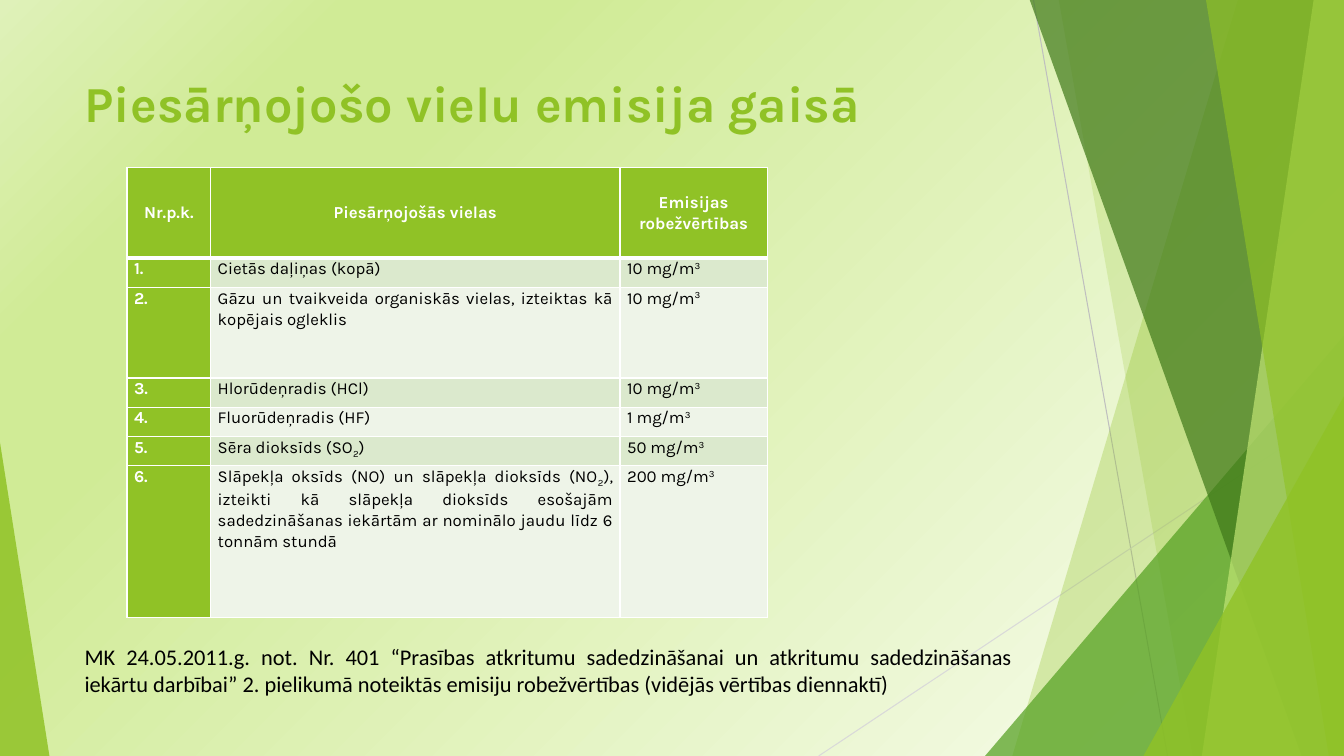
import pptx
import pptx.util
import pptx.dml.color
import pptx.enum.shapes
import pptx.enum.text
import pptx.oxml
import pptx.oxml.ns

Inches, Pt = pptx.util.Inches, pptx.util.Pt
RGBColor = pptx.dml.color.RGBColor
Shape = pptx.enum.shapes.MSO_SHAPE
Align = pptx.enum.text.PP_ALIGN
Anchor = pptx.enum.text.MSO_ANCHOR
qn = pptx.oxml.ns.qn
NS = pptx.oxml.ns.nsdecls("a")

LIME = RGBColor(0x90, 0xC2, 0x26)
GREEN = RGBColor(0x54, 0xA0, 0x21)
DARK = RGBColor(0x3F, 0x78, 0x19)
PALE = RGBColor(0xC0, 0xE4, 0x74)
WHITE = RGBColor(0xFF, 0xFF, 0xFF)
BLACK = RGBColor(0, 0, 0)
GREY = RGBColor(0xBF, 0xBF, 0xBF)
SILVER = RGBColor(0xD9, 0xD9, 0xD9)
BANDS = (RGBColor(0xDB, 0xE9, 0xCD), RGBColor(0xEE, 0xF4, 0xE8))
GLOW = ((0, "FAFDF3"), (74, "D0EB96"), (83, "D0EB96"), (100, "DFF1B9"))

WIDE, HIGH, TOP = 13.33, 7.5, -0.01
TITLE = "Piesārņojošo vielu emisija gaisā"
NOTE = ("MK 24.05.2011.g. not. Nr. 401 “Prasības atkritumu sadedzināšanai un "
        "atkritumu sadedzināšanas iekārtu darbībai” 2. pielikumā noteiktās "
        "emisiju robežvērtības (vidējās vērtības diennaktī)")
HEADS = ("Nr.p.k.", "Piesārņojošās vielas", "Emisijas robežvērtības")
# Substance as text parts joined by a subscript 2, limit in mg/m³, row height
ROWS = (
    (("Cietās daļiņas (kopā)",), 10, 0.29),
    (("Gāzu un tvaikveida organiskās vielas, izteiktas kā kopējais ogleklis",), 10, 0.9),
    (("Hlorūdeņradis (HCl)",), 10, 0.29),
    (("Fluorūdeņradis (HF)",), 1, 0.29),
    (("Sēra dioksīds (SO", ")"), 50, 0.29),
    (("Slāpekļa oksīds (NO) un slāpekļa dioksīds (NO",
      "), izteikti kā slāpekļa dioksīds esošajām sadedzināšanas iekārtām "
      "ar nominālo jaudu līdz 6 tonnām stundā"), 200, 1.51),
)
COLS = (0.83, 4.06, 1.46)
HEAD_H = 0.9

LINES = (((10.25, 0), (11.58, HIGH), GREY), ((WIDE, 4.03), (8.12, HIGH), SILVER))
# Back to front. Bands: left edge at top and at bottom, colour, opacity.
# Wedges: box, apex, colour, opacity.
FACETS = (
    ("band", (12.28, 10.04), LIME, 30),
    ("band", (10.5, 11.83), LIME, 20),
    ("wedge", (9.77, 3.33, 3.56, 4.17), 1, GREEN, 72),
    ("band", (10.21, 12.91), DARK, 70),
    ("band", (13.03, 11.92), PALE, 70),
    ("band", (11.96, 13.18), LIME, 65),
    ("wedge", (11.34, 3.93, 1.99, 3.57), 1, LIME, 80),
    ("wedge", (0, 4.39, 0.49, 3.11), 0, LIME, 85),
)


def glow(slide):
    """Radial background centred on the bottom right corner."""
    slide.background.fill.gradient()
    old = slide.element.find(".//" + qn("a:gradFill"))
    stops = "".join(f'<a:gs pos="{at * 1000}"><a:srgbClr val="{tone}"/></a:gs>'
                    for at, tone in GLOW)
    new = pptx.oxml.parse_xml(
        f'<a:gradFill {NS} rotWithShape="1"><a:gsLst>{stops}</a:gsLst>'
        '<a:path path="circle"><a:fillToRect l="100000" t="100000"/></a:path></a:gradFill>')
    old.getparent().replace(old, new)


def line(slide, start, end, tone):
    link = slide.shapes.add_connector(pptx.enum.shapes.MSO_CONNECTOR.STRAIGHT,
                                      *map(Inches, start + end))
    link.line.color.rgb = tone
    link.line.width = Pt(0.75)
    link.element.spPr.append(pptx.oxml.parse_xml(f"<a:effectLst {NS}/>"))


def band(slide, edge):
    """Outline from a slanted left edge to the slide's right side."""
    high, low = edge
    spots = ((high, TOP), (WIDE, TOP), (WIDE, HIGH), (low, HIGH))
    spots = [(Inches(x), Inches(y)) for x, y in spots]
    form = slide.shapes.build_freeform(*spots[0])
    form.add_line_segments(spots[1:], close=True)
    return form.convert_to_shape()


def wedge(slide, box, apex):
    shape = slide.shapes.add_shape(Shape.ISOSCELES_TRIANGLE, *map(Inches, box))
    shape.adjustments[0] = apex
    return shape


def tint(shape, tone, alpha):
    shape.shadow.inherit = False
    shape.line.fill.background()
    shape.fill.solid()
    shape.fill.fore_color.rgb = tone
    clr = shape.element.spPr.find(".//" + qn("a:srgbClr"))
    clr.append(pptx.oxml.parse_xml(f'<a:alpha {NS} val="{alpha * 1000}"/>'))


def write(para, text, size, font, tone, bold=False, shift=0):
    run = para.add_run()
    run.text = text
    run.font.size = Pt(size)
    run.font.name = font
    run.font.bold = bold
    run.font.color.rgb = tone
    if shift:
        run.font._element.set("baseline", str(shift * 1000))


def label(slide, box, text, size, font, tone, bold, align):
    frame = slide.shapes.add_textbox(*map(Inches, box)).text_frame
    frame.word_wrap = True
    para = frame.paragraphs[0]
    para.alignment = align
    write(para, text, size, font, tone, bold)


def fill_cell(cell, runs, back, tone, head, bold):
    cell.margin_left = cell.margin_right = Inches(0.07)
    cell.margin_top = cell.margin_bottom = 0
    cell.vertical_anchor = Anchor.MIDDLE if head else Anchor.TOP
    cell.fill.solid()
    cell.fill.fore_color.rgb = back
    para = cell.text_frame.paragraphs[0]
    para.alignment = Align.CENTER if head else Align.JUSTIFY
    para.line_spacing = 1.07
    para.space_after = Pt(8)
    for text, shift in runs:
        write(para, text, 12, "Karla", tone, bold, shift)
    for spot, side in enumerate("LRTB"):
        width = Pt(3 if head and side == "B" else 1)
        cell._tc.tcPr.insert(spot, pptx.oxml.parse_xml(
            f'<a:ln{side} {NS} w="{width}"><a:solidFill><a:srgbClr val="{WHITE}"/>'
            f"</a:solidFill></a:ln{side}>"))


def formula(parts):
    runs = [(parts[0], 0)]
    for part in parts[1:]:
        runs += [("2", -25), (part, 0)]
    return runs


def limits(slide):
    """Table of emission limits."""
    highs = [HEAD_H] + [row[2] for row in ROWS]
    box = (1.26, 1.66, sum(COLS), sum(highs))
    table = slide.shapes.add_table(len(highs), len(COLS), *map(Inches, box)).table
    for col, width in zip(table.columns, COLS):
        col.width = Inches(width)
    for row, high in zip(table.rows, highs):
        row.height = Inches(high)
    for c, text in enumerate(HEADS):
        fill_cell(table.cell(0, c), [(text, 0)], LIME, WHITE, True, True)
    for r, (parts, limit, _) in enumerate(ROWS, 1):
        back = BANDS[(r - 1) % 2]
        fill_cell(table.cell(r, 0), [(f"{r}.", 0)], LIME, WHITE, False, True)
        fill_cell(table.cell(r, 1), formula(parts), back, BLACK, False, False)
        fill_cell(table.cell(r, 2), [(f"{limit} mg/m", 0), ("3", 30)],
                  back, BLACK, False, False)


def main():
    deck = pptx.Presentation()
    deck.slide_width, deck.slide_height = Inches(WIDE), Inches(HIGH)
    slide = deck.slides.add_slide(deck.slide_layouts[6])
    glow(slide)
    for start, end, tone in LINES:
        line(slide, start, end, tone)
    draw = {"band": band, "wedge": wedge}
    for kind, *form, tone, alpha in FACETS:
        tint(draw[kind](slide, *form), tone, alpha)
    label(slide, (0.74, 0.67, 9.4, 1.44), TITLE, 36, "Karla", LIME, True, Align.LEFT)
    limits(slide)
    label(slide, (0.74, 6.33, 9.4, 0.64), NOTE, 16, "Calibri", BLACK, False, Align.JUSTIFY)
    deck.save("out.pptx")


if __name__ == "__main__":
    main()
